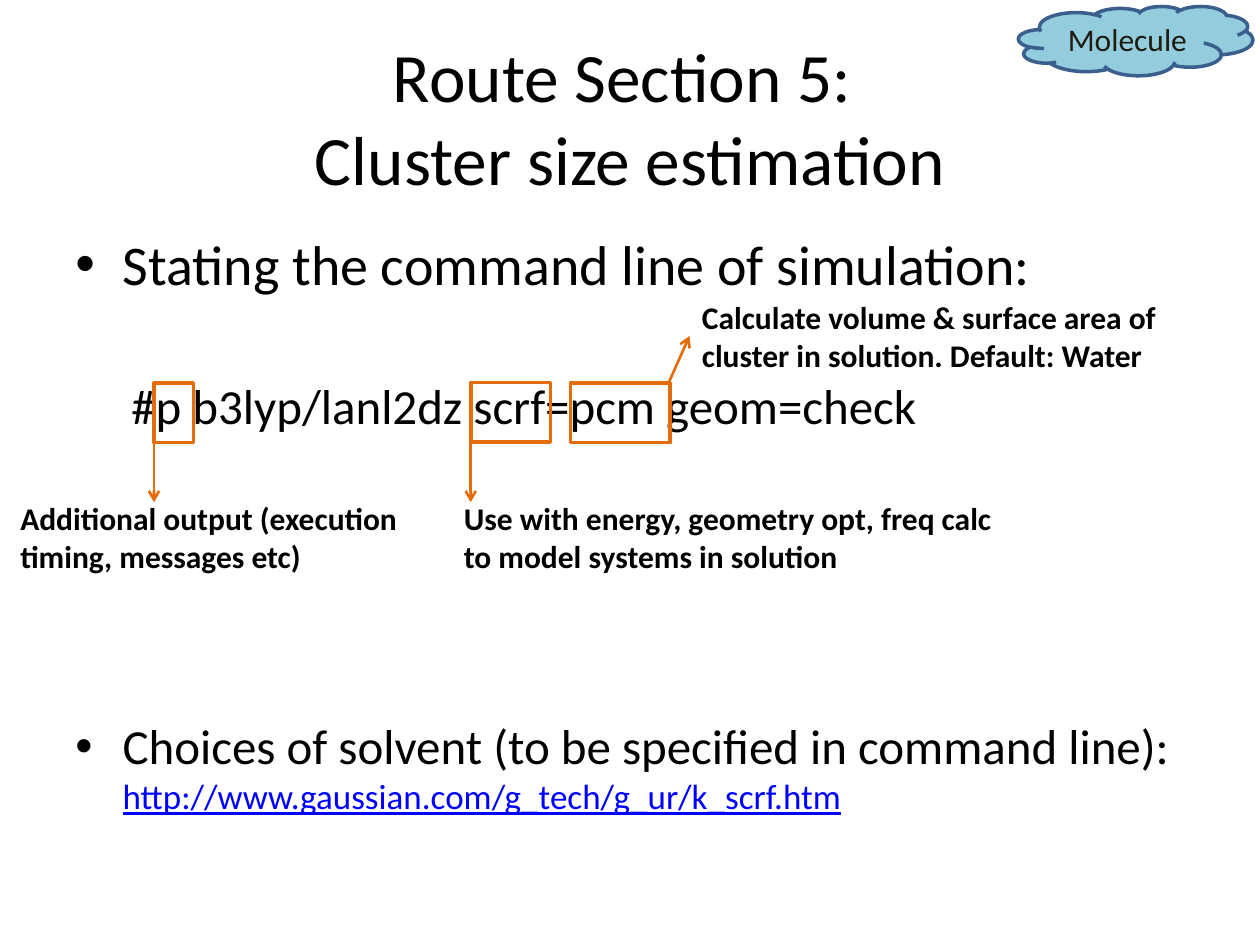
import dataclasses

import lxml.etree
import pptx
import pptx.dml.color
import pptx.enum.dml
import pptx.enum.shapes
import pptx.enum.text
import pptx.oxml.ns
import pptx.util

Pt = pptx.util.Pt
Align = pptx.enum.text.PP_ALIGN
Kind = pptx.enum.shapes.MSO_SHAPE


@dataclasses.dataclass(frozen=True)
class Theme:
    font: str = "Calibri"
    ink: str = "000000"
    link: str = "0000FF"
    mark: str = "E46C0A"
    cloud: str = "93CDDD"
    edge: str = "3A5F8C"
    label: str = "1E1C11"
    title: float = 39.6
    lead: float = 32
    body: float = 28
    url: float = 20
    note: float = 18
    frame: float = 2
    arrow: float = 1.5


@dataclasses.dataclass(frozen=True)
class Box:
    left: float
    top: float
    width: float
    height: float


@dataclasses.dataclass(frozen=True)
class Note:
    text: str
    place: Box
    frame: Box
    start: tuple[float, float]
    end: tuple[float, float]


@dataclasses.dataclass(frozen=True)
class Line:
    text: str
    size: float
    gap: float
    bullet: bool
    url: str = ""


THEME = Theme()
INDENT = 27
LINES = (
    Line("Stating the command line of simulation:", THEME.lead, 0, True),
    Line("#p b3lyp/lanl2dz scrf=pcm geom=check", THEME.body, 45, False),
    Line("Choices of solvent (to be specified in command line): ", THEME.body, 161, True,
         "http://www.gaussian.com/g_tech/g_ur/k_scrf.htm"),
)
NOTES = (
    Note("Additional output (execution timing, messages etc)",
         Box(4.5, 281.5, 265, 51), Box(88, 219, 22.5, 34), (88, 253), (88, 287)),
    Note("Use with energy, geometry opt, freq calc to model systems in solution",
         Box(258, 281.5, 335, 51), Box(269, 218.5, 45.5, 34), (269, 253), (269, 287)),
    Note("Calculate volume & surface area of cluster in solution. Default: Water",
         Box(394, 167, 294.5, 51), Box(326, 219, 57, 34), (382, 219), (394, 192)),
)


def paint(fill, tone: str) -> None:
    fill.solid()
    fill.fore_color.rgb = pptx.dml.color.RGBColor.from_string(tone)


def style(run, size: float, tone: str = THEME.ink, bold: bool = False) -> None:
    run.font.name = THEME.font
    run.font.size = Pt(size)
    run.font.bold = bold
    paint(run.font.fill, tone)


def add_text(slide, box: Box):
    area = slide.shapes.add_textbox(Pt(box.left), Pt(box.top), Pt(box.width), Pt(box.height))
    area.text_frame.word_wrap = True
    return area.text_frame


def add_shape(slide, kind, box: Box, tone: str):
    shape = slide.shapes.add_shape(kind, Pt(box.left), Pt(box.top), Pt(box.width), Pt(box.height))
    shape.shadow.inherit = False
    shape.fill.background()
    paint(shape.line.fill, tone)
    shape.line.width = Pt(THEME.frame)
    return shape


def add_arrow(slide, start: tuple[float, float], end: tuple[float, float]) -> None:
    line = slide.shapes.add_connector(
        pptx.enum.shapes.MSO_CONNECTOR.STRAIGHT, *map(Pt, start + end))
    paint(line.line.fill, THEME.mark)
    line.line.width = Pt(THEME.arrow)
    tail = lxml.etree.SubElement(line.line._get_or_add_ln(), pptx.oxml.ns.qn("a:tailEnd"))
    tail.set("type", "arrow")
    lxml.etree.SubElement(line._element.spPr, pptx.oxml.ns.qn("a:effectLst"))


def add_title(slide) -> None:
    frame = add_text(slide, Box(36, 21.6, 648, 90))
    frame.vertical_anchor = pptx.enum.text.MSO_ANCHOR.MIDDLE
    frame.text = "Route Section 5: \vCluster size estimation"
    frame.paragraphs[0].alignment = Align.CENTER
    for run in frame.paragraphs[0].runs:
        style(run, THEME.title)


def add_line(para, line: Line) -> None:
    para.text = line.text
    props = para._p.get_or_add_pPr()
    props.set("marL", str(Pt(INDENT if line.bullet else 32)))
    if line.bullet:
        props.set("indent", str(Pt(-INDENT)))
        font = lxml.etree.SubElement(props, pptx.oxml.ns.qn("a:buFont"))
        font.set("typeface", "Arial")
        mark = lxml.etree.SubElement(props, pptx.oxml.ns.qn("a:buChar"))
        mark.set("char", "•")
    para.space_before = Pt(line.gap)
    style(para.runs[0], line.size)
    if line.url:
        run = para.add_run()
        run.text = line.url
        style(run, THEME.url, THEME.link)
        run.font.underline = True


def add_body(slide) -> None:
    frame = add_text(slide, Box(36, 127.5, 684, 356))
    for rank, line in enumerate(LINES):
        add_line(frame.add_paragraph() if rank else frame.paragraphs[0], line)


def add_note(slide, note: Note) -> None:
    add_shape(slide, Kind.RECTANGLE, note.frame, THEME.mark)
    add_arrow(slide, note.start, note.end)
    frame = add_text(slide, note.place)
    frame.text = note.text
    style(frame.paragraphs[0].runs[0], THEME.note, bold=True)


def add_cloud(slide) -> None:
    cloud = add_shape(slide, Kind.CLOUD, Box(582, 3.6, 134, 39.6), THEME.edge)
    paint(cloud.fill, THEME.cloud)
    frame = cloud.text_frame
    frame.text = "Molecule"
    frame.word_wrap = False
    frame.vertical_anchor = pptx.enum.text.MSO_ANCHOR.MIDDLE
    frame.paragraphs[0].alignment = Align.CENTER
    style(frame.paragraphs[0].runs[0], THEME.note, THEME.label)


def main() -> None:
    """Build the slide on the route section and save it."""
    deck = pptx.Presentation()
    deck.slide_width, deck.slide_height = Pt(720), Pt(540)
    slide = deck.slides.add_slide(deck.slide_layouts[6])
    add_title(slide)
    add_body(slide)
    for note in NOTES:
        add_note(slide, note)
    add_cloud(slide)
    deck.save("out.pptx")


if __name__ == "__main__":
    main()
